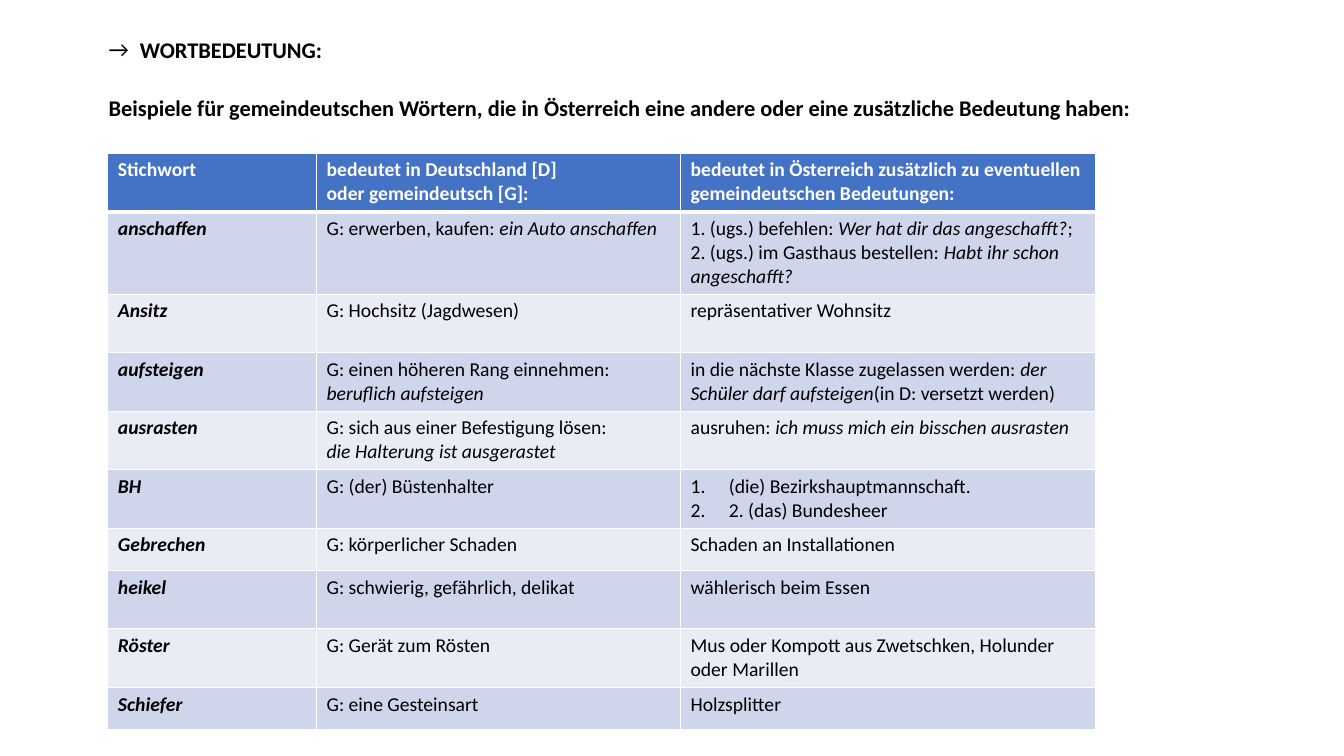
from lxml import etree
from pptx import Presentation
from pptx import util as u
from pptx.dml.color import RGBColor
from pptx.oxml.ns import qn

COLORS = {
    "black": "000000",
    "white": "FFFFFF",
    "header": "4472C4",
    "band_dark": "CFD5EA",
    "band_light": "E9EBF5",
}

COLUMN_WIDTHS = [2.07, 3.61, 4.12]
ROW_HEIGHTS = [0.58, 0.82, 0.58, 0.58, 0.58, 0.58, 0.42, 0.58, 0.58, 0.42]

HEADER = [
    "Stichwort",
    "bedeutet in Deutschland [D]\noder gemeindeutsch [G]:",
    "bedeutet in Österreich zusätzlich zu eventuellen gemeindeutschen Bedeutungen:",
]
# Asterisks enclose italic words; a line break starts a new paragraph.
ENTRIES = [
    ("anschaffen", "G: erwerben, kaufen: *ein Auto anschaffen*",
     "1. (ugs.) befehlen: *Wer hat dir das angeschafft?*; "
     "2. (ugs.) im Gasthaus bestellen: *Habt ihr schon angeschafft?*"),
    ("Ansitz", "G: Hochsitz (Jagdwesen)", "repräsentativer Wohnsitz"),
    ("aufsteigen", "G: einen höheren Rang einnehmen:\n*beruflich aufsteigen*",
     "in die nächste Klasse zugelassen werden: "
     "*der Schüler darf aufsteigen*(in D: versetzt werden)"),
    ("ausrasten", "G: sich aus einer Befestigung lösen:\n*die Halterung ist ausgerastet*",
     "ausruhen: *ich muss mich ein bisschen ausrasten*"),
    ("BH", "G: (der) Büstenhalter",
     "(die) Bezirkshauptmannschaft.\n2. (das) Bundesheer"),
    ("Gebrechen", "G: körperlicher Schaden", "Schaden an Installationen"),
    ("heikel", "G: schwierig, gefährlich, delikat", "wählerisch beim Essen"),
    ("Röster", "G: Gerät zum Rösten",
     "Mus oder Kompott aus Zwetschken, Holunder oder Marillen"),
    ("Schiefer", "G: eine Gesteinsart", "Holzsplitter"),
]
NUMBERED_ENTRY = "BH"


class SlideBuilder:
    font = "Calibri"
    heading_size = 16
    table_size = 14

    def __init__(self, slide):
        self.slide = slide

    def add_text(self, frame, content, size, color="black", bold=False):
        """Fill a text frame, switching italics at each asterisk."""
        for index, line in enumerate(content.split("\n")):
            paragraph = frame.paragraphs[0] if index == 0 else frame.add_paragraph()
            for position, part in enumerate(line.split("*")):
                if not part:
                    continue
                run = paragraph.add_run()
                run.text = part
                run.font.name = self.font
                run.font.size = u.Pt(size)
                run.font.bold = bold
                run.font.italic = position % 2 == 1
                run.font.color.rgb = RGBColor.from_string(COLORS[color])

    def bullet(self, paragraph, indent, tag, **attributes):
        properties = paragraph._p.get_or_add_pPr()
        properties.set("marL", str(u.Inches(indent)))
        properties.set("indent", str(-u.Inches(indent)))
        etree.SubElement(properties, qn("a:buFont"), typeface=self.font)
        etree.SubElement(properties, qn(tag), **attributes)

    def heading(self, left, top, width, height, content):
        box = self.slide.shapes.add_textbox(*map(u.Inches, (left, top, width, height)))
        frame = box.text_frame
        frame.word_wrap = True
        frame.margin_top = u.Inches(0.36)
        self.add_text(frame, content, self.heading_size, bold=True)
        title, subtitle = frame.paragraphs
        subtitle.space_before = u.Pt(22)
        self.bullet(title, 0.31, "a:buChar", char="→")

    def borders(self, cell, **widths):
        properties = cell._tc.get_or_add_tcPr()
        for side in "LRTB":
            line = etree.SubElement(properties, qn(f"a:ln{side}"),
                                    w=str(u.Pt(widths.get(side, 1))))
            fill = etree.SubElement(line, qn("a:solidFill"))
            etree.SubElement(fill, qn("a:srgbClr"), val=COLORS["white"])

    def cell(self, cell, content, fill, color="black", bold=False, **widths):
        self.borders(cell, **widths)
        cell.fill.solid()
        cell.fill.fore_color.rgb = RGBColor.from_string(COLORS[fill])
        self.add_text(cell.text_frame, content, self.table_size, color, bold)

    def glossary(self, left, top):
        table = self.slide.shapes.add_table(
            len(ROW_HEIGHTS), len(COLUMN_WIDTHS), u.Inches(left), u.Inches(top),
            u.Inches(sum(COLUMN_WIDTHS)), u.Inches(sum(ROW_HEIGHTS))).table
        for column, width in zip(table.columns, COLUMN_WIDTHS):
            column.width = u.Inches(width)
        for row, height in zip(table.rows, ROW_HEIGHTS):
            row.height = u.Inches(height)

        for column, label in enumerate(HEADER):
            self.cell(table.cell(0, column), label, "header", "white", True, B=3)
        for row, (keyword, german, austrian) in enumerate(ENTRIES, 1):
            fill = "band_dark" if row % 2 else "band_light"
            top_width = 3 if row == 1 else 1
            for column, content in enumerate((f"*{keyword}*", german, austrian)):
                self.cell(table.cell(row, column), content, fill,
                          bold=column == 0, T=top_width)
            if keyword == NUMBERED_ENTRY:
                for paragraph in table.cell(row, 2).text_frame.paragraphs:
                    self.bullet(paragraph, 0.38, "a:buAutoNum", type="arabicPeriod")


def main():
    presentation = Presentation()
    presentation.slide_width = u.Inches(13.33)
    presentation.slide_height = u.Inches(7.5)
    builder = SlideBuilder(presentation.slides.add_slide(presentation.slide_layouts[6]))
    builder.heading(
        0.98, 0, 10.6, 2.39,
        "WORTBEDEUTUNG:\nBeispiele für gemeindeutschen Wörtern, die in Österreich "
        "eine andere oder eine zusätzliche Bedeutung haben:")
    builder.glossary(1.07, 1.52)
    presentation.save("out.pptx")


if __name__ == "__main__":
    main()
